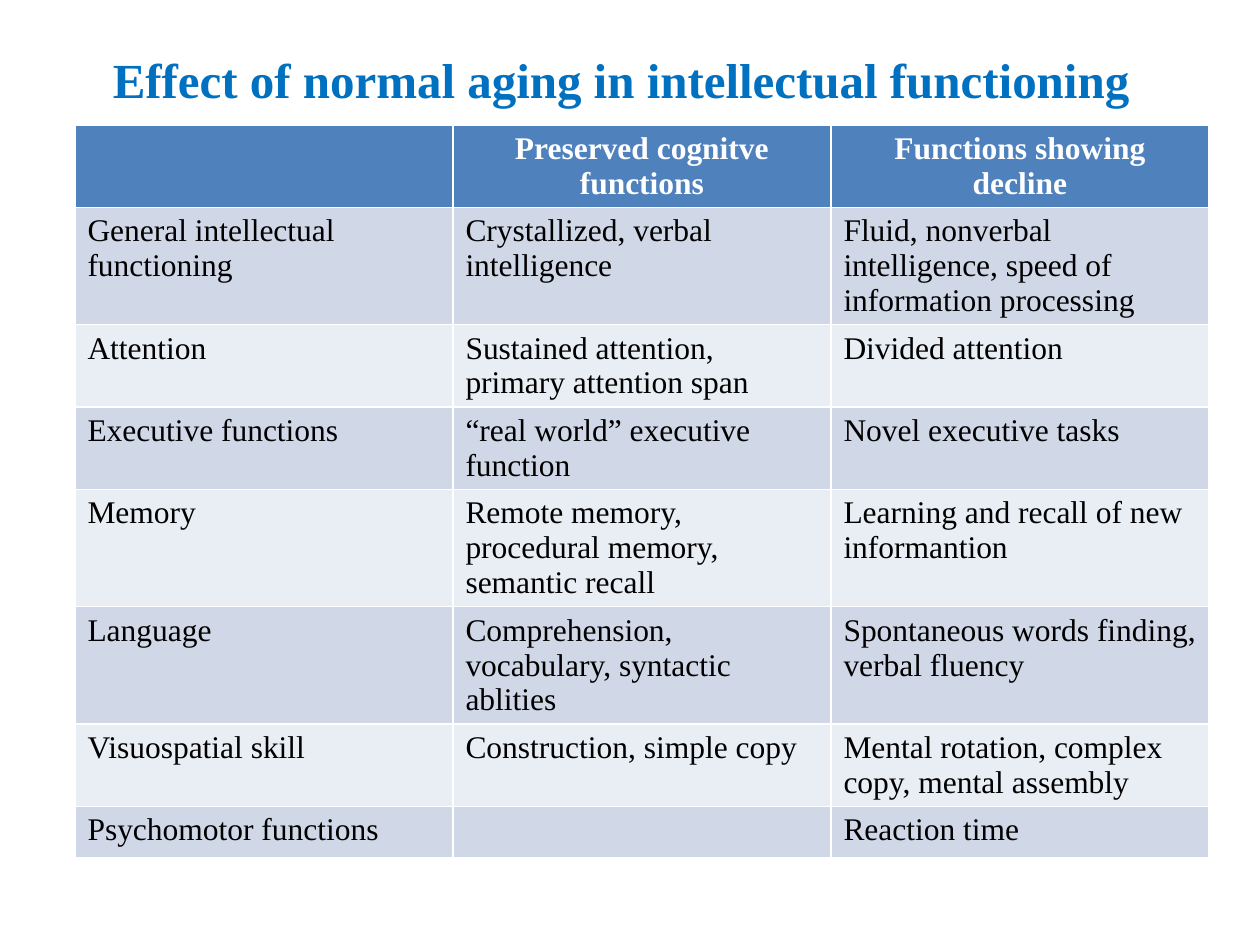
from pptx import Presentation
from pptx.dml.color import RGBColor as RGB
from pptx.enum.text import MSO_ANCHOR as Anchor, PP_ALIGN as Align
from pptx.util import Cm, Pt

# Content
HEADING = "Effect of normal aging in intellectual functioning"
HEADERS = ("", "Preserved cognitve functions", "Functions showing decline")
FUNCTIONS = [
    ("General intellectual functioning", "Crystallized, verbal intelligence",
     "Fluid, nonverbal intelligence, speed of information processing"),
    ("Attention", "Sustained attention, primary attention span", "Divided attention"),
    ("Executive functions", "“real world” executive function", "Novel executive tasks"),
    ("Memory", "Remote memory, procedural memory, semantic recall",
     "Learning and recall of new informantion"),
    ("Language", "Comprehension, vocabulary, syntactic ablities",
     "Spontaneous words finding, verbal fluency"),
    ("Visuospatial skill", "Construction, simple copy",
     "Mental rotation, complex copy, mental assembly"),
    ("Psychomotor functions", "", "Reaction time"),
]

# Look
FONT = "Times New Roman"
COLORS = {"title": "0070C0", "header": "4F81BD", "header_text": "FFFFFF",
          "odd": "D0D8E8", "even": "E9EDF4", "text": "000000"}
ROW_HEIGHT = Cm(1.03)  # minimum; rows grow with their text


def format_text(frame, size, color, bold, align):
    for paragraph in frame.paragraphs:
        paragraph.alignment = align
        for run in paragraph.runs:
            run.font.name = FONT
            run.font.size = Pt(size)
            run.font.bold = bold
            run.font.color.rgb = RGB.from_string(COLORS[color])


def main():
    deck = Presentation()
    deck.slide_width, deck.slide_height = Cm(25.4), Cm(19.05)
    slide = deck.slides.add_slide(deck.slide_layouts[5])

    # Title
    title = slide.shapes.title
    title.left, title.top, title.width, title.height = Cm(1.09), Cm(0), Cm(22.86), Cm(3.18)
    title.text_frame.text = HEADING
    title.text_frame.vertical_anchor = Anchor.MIDDLE
    format_text(title.text_frame, 28, "title", True, Align.CENTER)

    # Table of functions: header row, then alternating bands
    rows = [HEADERS, *FUNCTIONS]
    table = slide.shapes.add_table(len(rows), len(HEADERS), Cm(1.51), Cm(2.52),
                                   Cm(22.86), ROW_HEIGHT * len(rows)).table
    for r, row in enumerate(rows):
        is_header = r == 0
        band = "header" if is_header else "odd" if r % 2 else "even"
        for c, wording in enumerate(row):
            cell = table.cell(r, c)
            cell.fill.solid()
            cell.fill.fore_color.rgb = RGB.from_string(COLORS[band])
            cell.text_frame.text = wording
            format_text(cell.text_frame, 18, "header_text" if is_header else "text",
                        is_header, Align.CENTER if is_header else Align.LEFT)

    deck.save("out.pptx")


if __name__ == "__main__":
    main()
